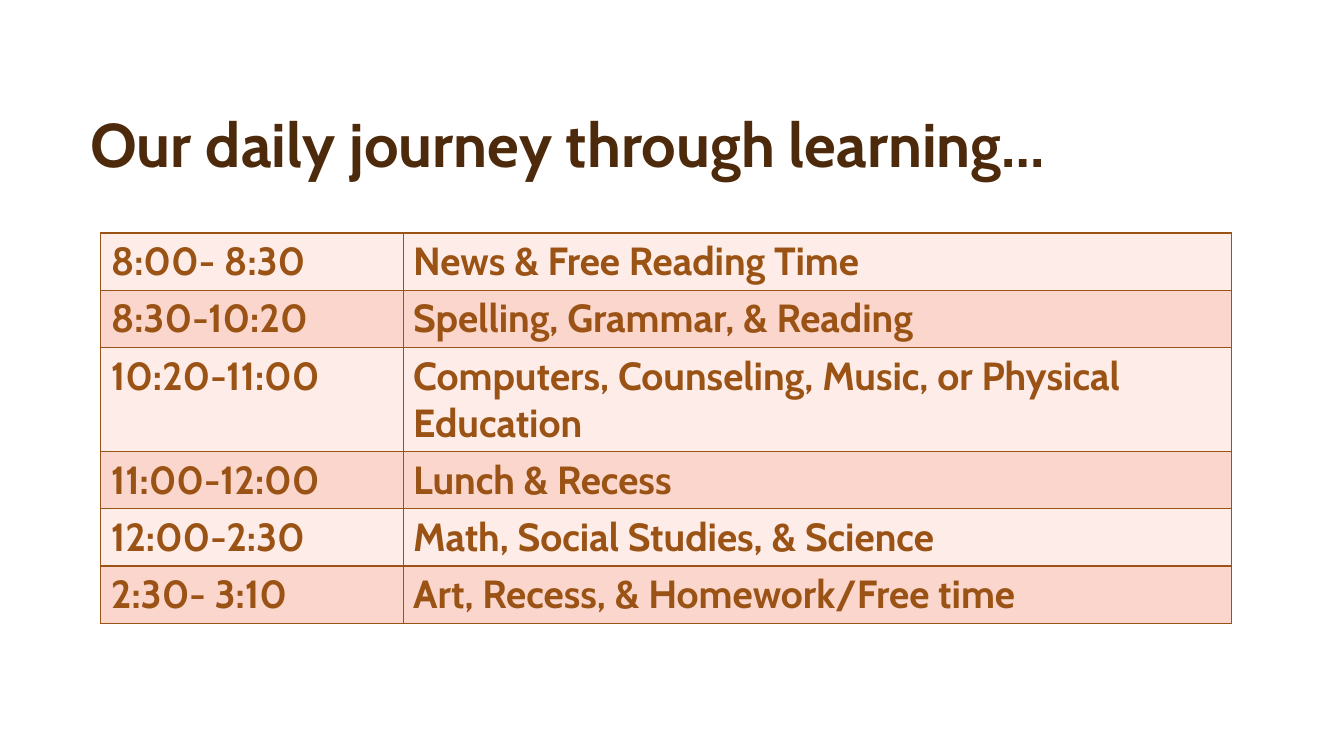
from lxml.etree import SubElement
from pptx import Presentation
from pptx.dml.color import RGBColor
from pptx.enum.text import MSO_ANCHOR
from pptx.oxml.ns import qn
from pptx.util import Cm, Pt

COLORS = {
    "title": "4D2A0B",
    "text": "9A5315",
    "border": "9A5315",
    "light_row": "FDECE8",
    "dark_row": "FAD6CD",
}
TITLE_FONT = {"name": "Cabin", "size": Pt(44), "bold": True}
CELL_FONT = {"name": "Cabin", "size": Pt(28), "bold": True}
COLUMN_WIDTHS = [Cm(7.62), Cm(20.88)]
ROW_HEIGHT = Cm(1.32)
SCHEDULE = [
    ("8:00- 8:30", "News & Free Reading Time"),
    ("8:30-10:20", "Spelling, Grammar, & Reading"),
    ("10:20-11:00", "Computers, Counseling, Music, or Physical Education"),
    ("11:00-12:00", "Lunch & Recess"),
    ("12:00-2:30", "Math, Social Studies, & Science"),
    ("2:30- 3:10", "Art, Recess, & Homework/Free time"),
]


def color(name):
    return RGBColor.from_string(COLORS[name])


def write_text(tf, text, font, color_name):
    p = tf.paragraphs[0]
    r = p.add_run()
    r.text = text
    for key, value in font.items():
        setattr(r.font, key, value)
    r.font.color.rgb = color(color_name)
    return p


def add_title(s, text):
    tf = s.shapes.add_textbox(Cm(2.03), Cm(1.3), Cm(30.07), Cm(3.38)).text_frame
    tf.word_wrap = True
    tf.vertical_anchor = MSO_ANCHOR.BOTTOM
    write_text(tf, text, TITLE_FONT, "title").line_spacing = 0.9


def set_borders(cell):
    """Draw a thin line on all four sides; lines must precede the cell's fill."""
    tc_pr = cell._tc.get_or_add_tcPr()
    for i, side in enumerate(("a:lnL", "a:lnR", "a:lnT", "a:lnB")):
        ln = SubElement(tc_pr, qn(side), w=str(Pt(1)))
        fill = SubElement(ln, qn("a:solidFill"))
        SubElement(fill, qn("a:srgbClr"), val=COLORS["border"])
        tc_pr.insert(i, ln)


def add_schedule(s, rows):
    table = s.shapes.add_table(
        len(rows), len(COLUMN_WIDTHS), Cm(2.54), Cm(5.87),
        sum(COLUMN_WIDTHS), ROW_HEIGHT * len(rows),
    ).table
    table.first_row = False
    table.horz_banding = False
    for column, width in zip(table.columns, COLUMN_WIDTHS):
        column.width = width
    for i, texts in enumerate(rows):
        table.rows[i].height = ROW_HEIGHT
        for cell, text in zip(table.rows[i].cells, texts):
            cell.fill.solid()
            cell.fill.fore_color.rgb = color("dark_row" if i % 2 else "light_row")
            set_borders(cell)
            write_text(cell.text_frame, text, CELL_FONT, "text")


def main():
    prs = Presentation()
    prs.slide_width, prs.slide_height = Cm(33.87), Cm(19.05)
    s = prs.slides.add_slide(prs.slide_layouts[6])
    add_title(s, "Our daily journey through learning…")
    add_schedule(s, SCHEDULE)
    prs.save("out.pptx")


if __name__ == "__main__":
    main()
